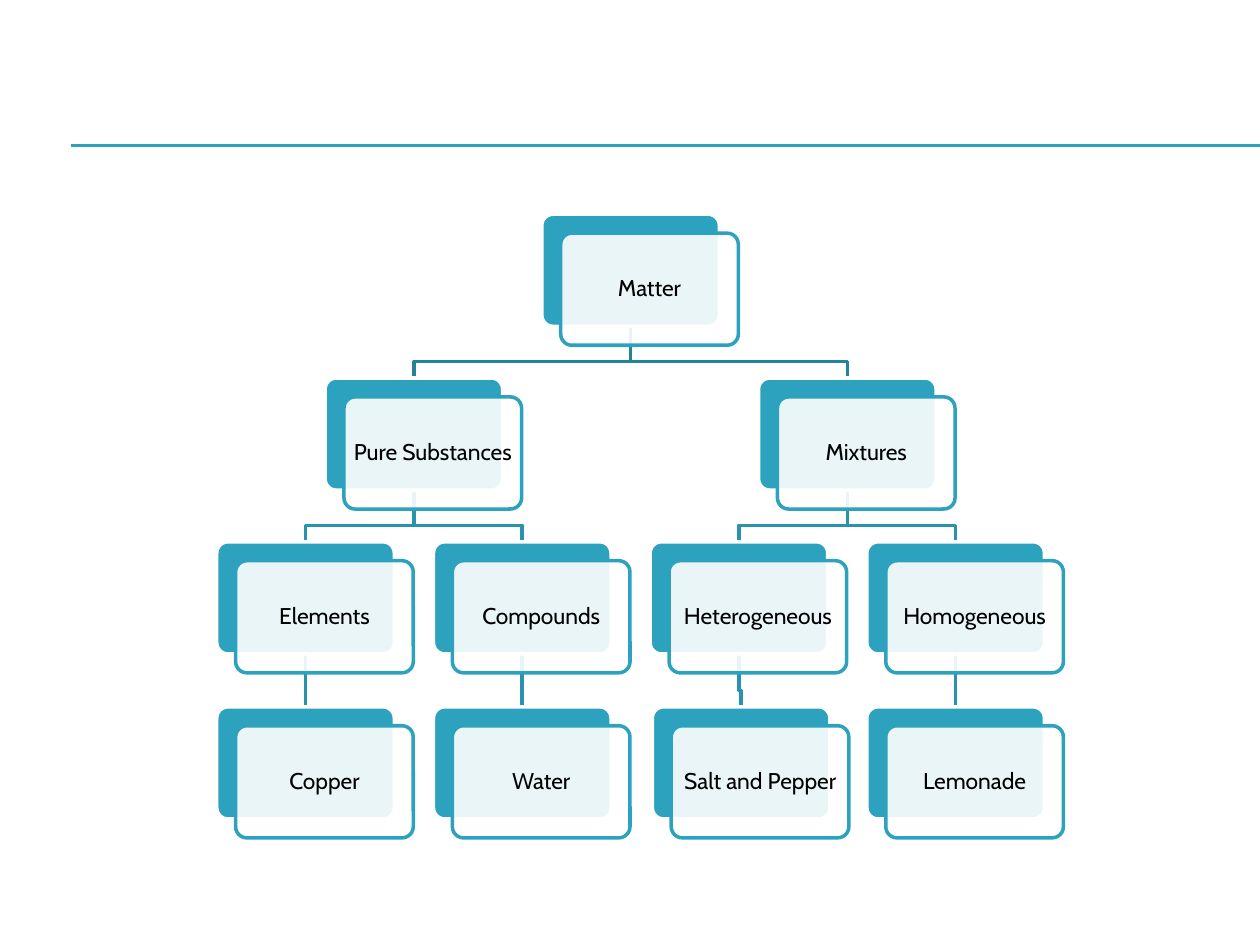
from lxml import etree
from pptx import Presentation
from pptx.dml.color import RGBColor
from pptx.enum.shapes import MSO_CONNECTOR, MSO_SHAPE
from pptx.enum.text import MSO_ANCHOR, PP_ALIGN
from pptx.oxml.ns import qn
from pptx.util import Inches, Pt

ROUNDED = MSO_SHAPE.ROUNDED_RECTANGLE
STRAIGHT = MSO_CONNECTOR.STRAIGHT
MIDDLE = MSO_ANCHOR.MIDDLE
CENTER = PP_ALIGN.CENTER
BOTTOM_SIDE, TOP_SIDE = 0, 0
BOTTOM_SIDE = 2

COLORS = {
    "teal": "2DA2BF",
    "upper_link": "248299",
    "lower_link": "2993AD",
    "white": "FFFFFF",
    "text": "000000",
}
FONT = "Cabin"

# name: (column, row, parent)
NODES = {
    "Matter": (1.5, 0, None),
    "Pure Substances": (0.5, 1, "Matter"),
    "Elements": (0, 2, "Pure Substances"),
    "Copper": (0, 3, "Elements"),
    "Compounds": (1, 2, "Pure Substances"),
    "Water": (1, 3, "Compounds"),
    "Mixtures": (2.5, 1, "Matter"),
    "Heterogeneous": (2, 2, "Mixtures"),
    "Salt and Pepper": (2.01, 3, "Heterogeneous"),
    "Homogeneous": (3, 2, "Mixtures"),
    "Lemonade": (3, 3, "Homogeneous"),
}
ROW_TOPS = [1.7, 3, 4.3, 5.61]
COLUMN_LEFT = COLUMN_PITCH = 1.72
BOX_WIDTH, BOX_HEIGHT = 1.41, 0.89
CARD_SHIFT = 0.15
BEND_GAP = 0.13
RULE_LEFT, RULE_TOPS = 0.56, [1.15, 1.16]


def color(name):
    return RGBColor.from_string(COLORS[name])


def style_line(item, name, width):
    item.line.color.rgb = color(name)
    item.line.width = Pt(width)


def add_line(page, start, end, name, width):
    line = page.shapes.add_connector(STRAIGHT, *map(Inches, start + end))
    style_line(line, name, width)
    etree.SubElement(line.element.spPr, qn("a:effectLst"))
    return line


def add_box(page, left, top, fill, outline, opacity=100):
    box = page.shapes.add_shape(
        ROUNDED, Inches(left), Inches(top), Inches(BOX_WIDTH), Inches(BOX_HEIGHT))
    box.adjustments[0] = 0.1
    box.shadow.inherit = False
    box.fill.solid()
    box.fill.fore_color.rgb = color(fill)
    if opacity < 100:
        fill_color = box.element.spPr.find(qn("a:solidFill"))[0]
        etree.SubElement(fill_color, qn("a:alpha"), val=str(opacity * 1000))
    style_line(box, outline, 2)
    return box


def write_text(box, text, size, name, inset):
    frame = box.text_frame
    frame.word_wrap = True
    frame.vertical_anchor = MIDDLE
    frame.margin_left = frame.margin_right = Inches(inset)
    frame.margin_top = frame.margin_bottom = Inches(inset)
    para = frame.paragraphs[0]
    para.alignment = CENTER
    para.line_spacing = 0.9
    span = para.add_run()
    span.text = text
    span.font.name = FONT
    span.font.size = Pt(size)
    span.font.color.rgb = color(name)


def position(name):
    column, row, parent = NODES[name]
    return COLUMN_LEFT + column * COLUMN_PITCH, ROW_TOPS[row]


def add_link(page, parent, child, backs):
    parent_left, parent_top = position(parent)
    child_left, child_top = position(child)
    start = (parent_left + BOX_WIDTH / 2, parent_top + BOX_HEIGHT)
    end = (child_left + BOX_WIDTH / 2, child_top)
    shade = "upper_link" if NODES[parent][1] == 0 else "lower_link"
    if start[0] == end[0]:
        link = add_line(page, start, end, shade, 2)
        link.begin_connect(backs[parent], BOTTOM_SIDE)
        link.end_connect(backs[child], TOP_SIDE)
    else:
        bend = child_top - BEND_GAP
        corners = [(start[0], bend), (end[0], bend), end]
        outline = page.shapes.build_freeform(*map(Inches, start))
        outline.add_line_segments(
            [(Inches(x), Inches(y)) for x, y in corners], close=False)
        link = outline.convert_to_shape()
        link.shadow.inherit = False
        link.fill.background()
        style_line(link, shade, 2)
    page.shapes.element.insert(2, link.element)


def main():
    deck = Presentation()
    deck.slide_width, deck.slide_height = Inches(10), Inches(7.5)
    page = deck.slides.add_slide(deck.slide_layouts[6])

    for top in RULE_TOPS:
        add_line(page, (RULE_LEFT, top), (10, top), "teal", 0.75)

    backs = {}
    for name in NODES:
        left, top = position(name)
        backs[name] = add_box(page, left, top, "teal", "white")
        card = add_box(page, left + CARD_SHIFT, top + CARD_SHIFT,
                       "white", "teal", opacity=90)
        write_text(card, name, size=13, name="text", inset=0.02)

    for name, (column, row, parent) in NODES.items():
        if parent:
            add_link(page, parent, name, backs)

    deck.save("out.pptx")


if __name__ == "__main__":
    main()
